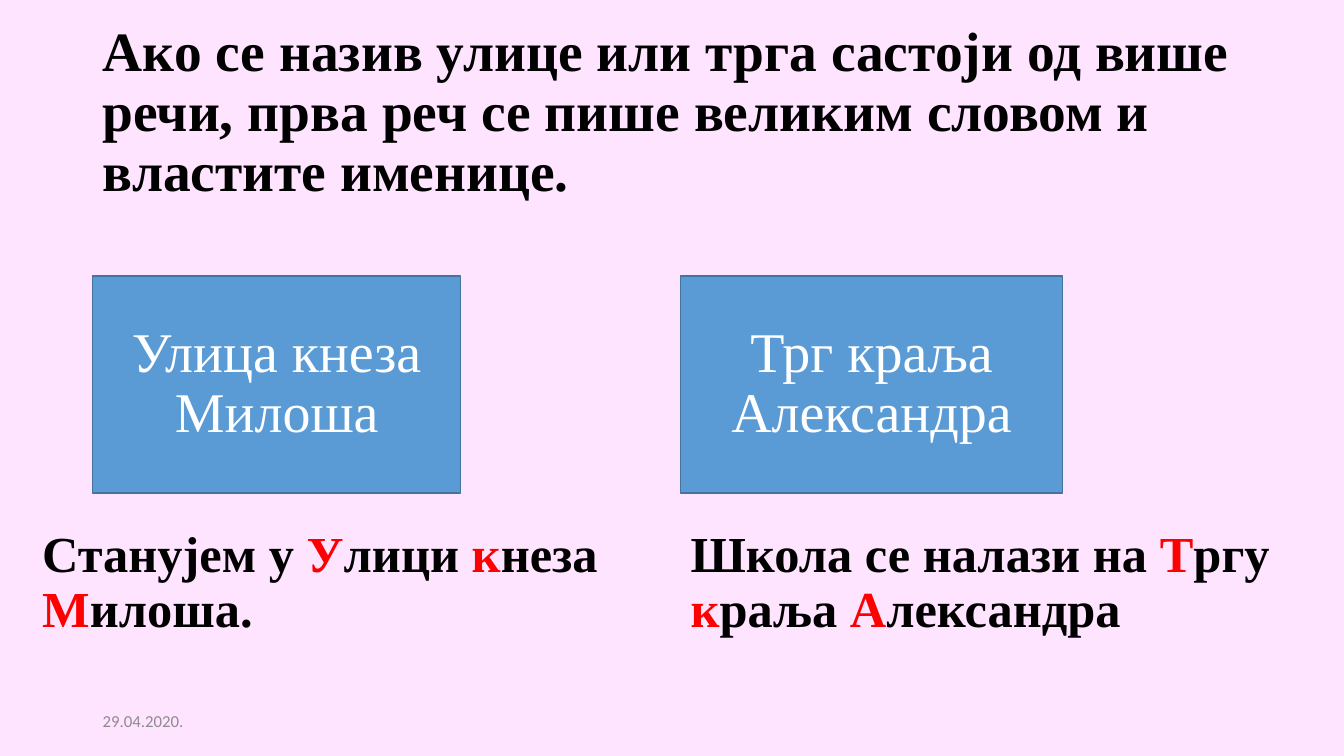
from dataclasses import dataclass

from pptx import Presentation
from pptx.dml.color import RGBColor
from pptx.enum.shapes import MSO_SHAPE
from pptx.enum.text import MSO_ANCHOR, MSO_AUTO_SIZE, PP_ALIGN
from pptx.util import Inches, Pt


@dataclass(frozen=True)
class Theme:
    background: str = "FFE4FF"
    ink: str = "000000"
    accent: str = "FF0000"
    box_fill: str = "5B9BD5"
    box_line: str = "43739E"
    box_text: str = "FFFFFF"
    muted: str = "8C8C8C"
    font: str = "Times New Roman"
    date_font: str = "Calibri"
    title_size: float = 39.6
    box_size: float = 40
    sentence_size: float = 36
    date_size: float = 12


def color(value):
    return RGBColor.from_string(value)


def write_text(shape, text, *, size, font, ink, accent=None, bold=False,
               align=PP_ALIGN.LEFT, anchor=MSO_ANCHOR.MIDDLE,
               line_spacing=0.9, space_before=0):
    """Fill a shape with one paragraph; parts between asterisks take the accent."""
    frame = shape.text_frame
    frame.word_wrap = True
    frame.auto_size = MSO_AUTO_SIZE.NONE
    frame.vertical_anchor = anchor
    paragraph = frame.paragraphs[0]
    paragraph.alignment = align
    paragraph.line_spacing = line_spacing
    paragraph.space_before = Pt(space_before)
    for index, part in enumerate(text.split("*")):
        if not part:
            continue
        run = paragraph.add_run()
        run.text = part
        run.font.name = font
        run.font.size = Pt(size)
        run.font.bold = bold
        run.font.color.rgb = color(accent if index % 2 else ink)


class SlideBuilder:
    """Places elements on a grid of 100 columns by 100 rows."""

    def __init__(self, presentation, theme):
        self.theme = theme
        self.column = presentation.slide_width / 100
        self.row = presentation.slide_height / 100
        self.slide = presentation.slides.add_slide(presentation.slide_layouts[5])
        fill = self.slide.background.fill
        fill.solid()
        fill.fore_color.rgb = color(theme.background)

    def area(self, left, top, width, height):
        return (round(left * self.column), round(top * self.row),
                round(width * self.column), round(height * self.row))

    def title(self, text, *cells):
        shape = self.slide.shapes.title
        shape.left, shape.top, shape.width, shape.height = self.area(*cells)
        write_text(shape, text, size=self.theme.title_size, font=self.theme.font,
                   ink=self.theme.ink, bold=True)

    def name_box(self, text, *cells):
        shape = self.slide.shapes.add_shape(MSO_SHAPE.RECTANGLE, *self.area(*cells))
        shape.shadow.inherit = False
        shape.fill.solid()
        shape.fill.fore_color.rgb = color(self.theme.box_fill)
        shape.line.color.rgb = color(self.theme.box_line)
        shape.line.width = Pt(1)
        write_text(shape, text, size=self.theme.box_size, font=self.theme.font,
                   ink=self.theme.box_text, align=PP_ALIGN.CENTER, space_before=10)

    def sentence(self, text, *cells):
        shape = self.slide.shapes.add_textbox(*self.area(*cells))
        write_text(shape, text, size=self.theme.sentence_size, font=self.theme.font,
                   ink=self.theme.ink, accent=self.theme.accent, bold=True,
                   anchor=MSO_ANCHOR.BOTTOM, space_before=10)

    def date(self, text, *cells):
        shape = self.slide.shapes.add_textbox(*self.area(*cells))
        write_text(shape, text, size=self.theme.date_size, font=self.theme.date_font,
                   ink=self.theme.muted, line_spacing=1)


def main():
    presentation = Presentation()
    presentation.slide_width = Inches(13.33)
    presentation.slide_height = Inches(7.5)
    builder = SlideBuilder(presentation, Theme())

    margin, right_half = 6.9, 50.64
    box_top, box_height = 36.53, 28.67
    sentence_top, sentence_height = 70.4, 14.67

    # Rule
    builder.title("Ако се назив улице или трга састоји од више речи, "
                  "прва реч се пише великим словом и властите именице.",
                  margin, 5.33, 86.27, 19.33)

    # Names of the street and the square
    builder.name_box("Улица кнеза Милоша", margin, box_top, 27.38, box_height)
    builder.name_box("Трг краља Александра", right_half, box_top, 28.43, box_height)

    # Example sentences with the key letters highlighted
    builder.sentence("Станујем у *У*лици *к*неза *М*илоша.",
                     2.4, sentence_top, 47.56, sentence_height)
    builder.sentence("Школа се налази на *Т*ргу *к*раља *А*лександра",
                     right_half, sentence_top, 46.74, sentence_height)

    # Date
    builder.date("29.04.2020.", margin, 92.67, 22.5, 5.33)

    presentation.save("out.pptx")


if __name__ == "__main__":
    main()
